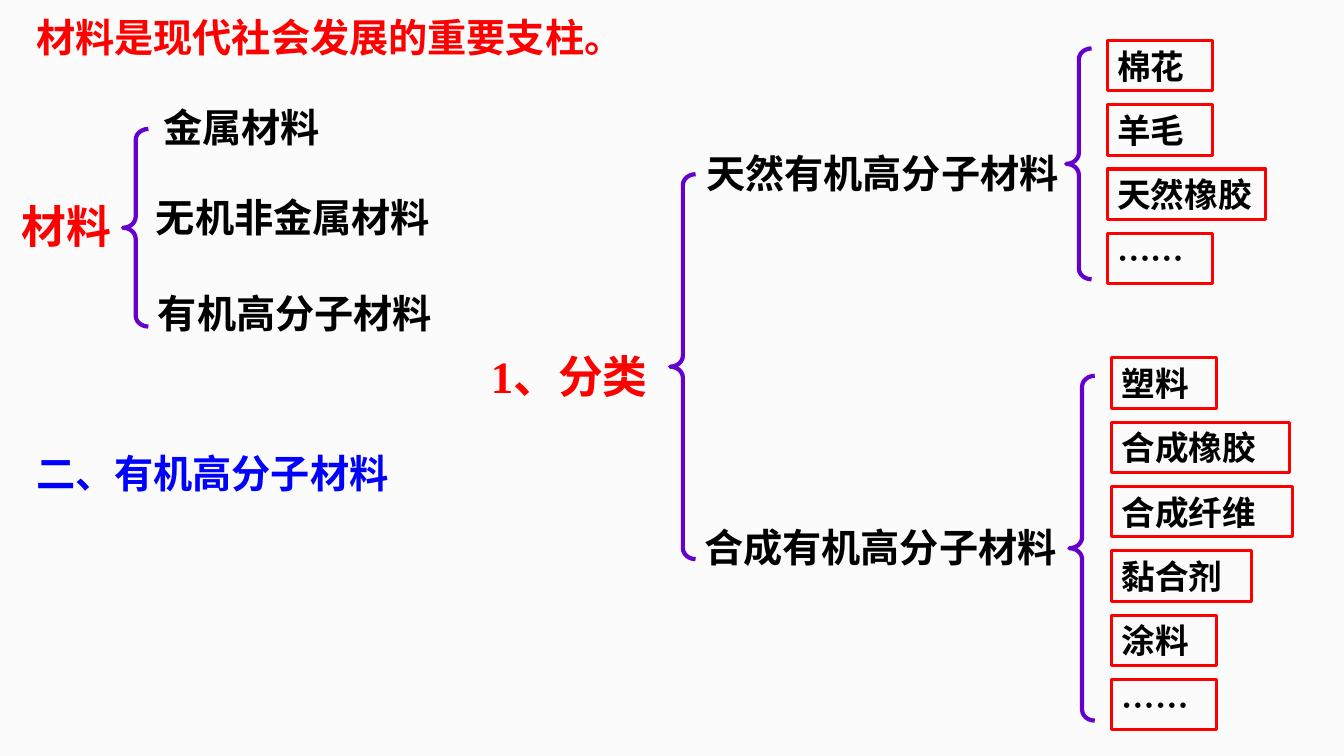
from dataclasses import dataclass

from lxml import etree
from pptx import Presentation
from pptx.dml.color import RGBColor
from pptx.enum.shapes import MSO_SHAPE
from pptx.enum.text import MSO_ANCHOR, MSO_AUTO_SIZE, PP_ALIGN
from pptx.oxml.ns import qn
from pptx.util import Cm, Pt

LEFT_BRACE = MSO_SHAPE.LEFT_BRACE
RECTANGLE = MSO_SHAPE.RECTANGLE
MIDDLE = MSO_ANCHOR.MIDDLE
NO_AUTOFIT = MSO_AUTO_SIZE.NONE
LEFT = PP_ALIGN.LEFT
JUSTIFY = PP_ALIGN.JUSTIFY
TITLE_ONLY = 5


@dataclass(frozen=True)
class Theme:
    background: RGBColor = RGBColor(0xFB, 0xFB, 0xFB)
    red: RGBColor = RGBColor(0xFF, 0x00, 0x00)
    black: RGBColor = RGBColor(0x00, 0x00, 0x00)
    blue: RGBColor = RGBColor(0x00, 0x00, 0xFF)
    purple: RGBColor = RGBColor(0x66, 0x00, 0xCC)
    font: str = "Noto Sans CJK SC"
    serif: str = "Times New Roman"
    root_size: int = 32
    text_size: int = 28
    example_size: int = 24
    brace_line: float = 3
    box_line: float = 2.25


THEME = Theme()


@dataclass(frozen=True)
class Label:
    text: str
    left: float
    top: float
    width: float
    height: float = 1.45
    size: int = THEME.text_size
    color: RGBColor = THEME.black
    font: str = THEME.font
    align: PP_ALIGN = LEFT
    line_spacing: float = 1.0


@dataclass(frozen=True)
class Brace:
    left: float
    top: float
    height: float
    width: float = 0.64


@dataclass(frozen=True)
class Example:
    text: str
    width: float = 2.64


@dataclass(frozen=True)
class ExampleColumn:
    left: float
    top: float
    examples: tuple[Example, ...]
    pitch: float = 1.62
    box_height: float = 1.27


TITLE = Label("材料是现代社会发展的重要支柱。", 0.66, 0.2, 16.92, color=THEME.red)

LABELS = (
    Label("材料", 0.3, 4.88, 2.85, 1.63, THEME.root_size, THEME.red),
    Label("金属材料", 3.86, 2.46, 5.28),
    Label("无机非金属材料", 3.68, 4.75, 7.6),
    Label("有机高分子材料", 3.73, 7.16, 7.65),
    Label("二、有机高分子材料", 0.66, 11.18, 10.39, color=THEME.blue),
    Label("1、分类", 12.12, 7.98, 5.11, 2.31, THEME.root_size, THEME.red,
          THEME.serif, JUSTIFY, 1.5),
    Label("天然有机高分子材料", 17.55, 3.63, 9.93),
    Label("合成有机高分子材料", 17.5, 13.06, 9.6),
)

BRACES = (
    Brace(3.1, 3.25, 4.98),
    Brace(16.89, 4.39, 9.7),
    Brace(26.87, 1.22, 5.82),
    Brace(26.95, 9.47, 8.69),
)

COLUMNS = (
    ExampleColumn(27.91, 1.02, (
        Example("棉花"), Example("羊毛"), Example("天然橡胶", 3.99), Example("……"),
    )),
    ExampleColumn(28.02, 9.02, (
        Example("塑料"), Example("合成橡胶", 4.47), Example("合成纤维", 4.55),
        Example("黏合剂", 3.53), Example("涂料"), Example("……"),
    )),
)


def write_label(s, label: Label) -> None:
    """Place the shape and fill it with the label's formatted text."""
    s.left, s.top = Cm(label.left), Cm(label.top)
    s.width, s.height = Cm(label.width), Cm(label.height)
    tf = s.text_frame
    tf.text = label.text
    tf.word_wrap = True
    tf.auto_size = NO_AUTOFIT
    tf.vertical_anchor = MIDDLE
    p = tf.paragraphs[0]
    p.alignment = label.align
    p.line_spacing = label.line_spacing
    r = p.runs[0]
    r.font.name = label.font
    r.font.size = Pt(label.size)
    r.font.bold = True
    r.font.color.rgb = label.color
    east_asian = etree.SubElement(r.font._element, qn("a:ea"))
    east_asian.set("typeface", THEME.font)


def add_outline(slide, preset: MSO_SHAPE, left: float, top: float, width: float,
                height: float, color: RGBColor, weight: float):
    s = slide.shapes.add_shape(preset, Cm(left), Cm(top), Cm(width), Cm(height))
    s.shadow.inherit = False
    s.fill.background()
    s.line.color.rgb = color
    s.line.width = Pt(weight)
    return s


def add_brace(slide, brace: Brace) -> None:
    s = add_outline(slide, LEFT_BRACE, brace.left, brace.top, brace.width,
                    brace.height, THEME.purple, THEME.brace_line)
    s.adjustments[0] = 0.43
    s.adjustments[1] = 0.5


def add_column(slide, column: ExampleColumn) -> None:
    for i, example in enumerate(column.examples):
        label = Label(example.text, column.left, column.top + i * column.pitch,
                      example.width, column.box_height, THEME.example_size)
        s = add_outline(slide, RECTANGLE, label.left, label.top, label.width,
                        label.height, THEME.red, THEME.box_line)
        write_label(s, label)


def main() -> None:
    prs = Presentation()
    prs.slide_width, prs.slide_height = Cm(33.87), Cm(19.05)
    slide = prs.slides.add_slide(prs.slide_layouts[TITLE_ONLY])
    slide.background.fill.solid()
    slide.background.fill.fore_color.rgb = THEME.background

    write_label(slide.shapes.title, TITLE)
    for label in LABELS:
        write_label(slide.shapes.add_textbox(0, 0, 0, 0), label)
    for brace in BRACES:
        add_brace(slide, brace)
    for column in COLUMNS:
        add_column(slide, column)

    prs.save("out.pptx")


if __name__ == "__main__":
    main()
